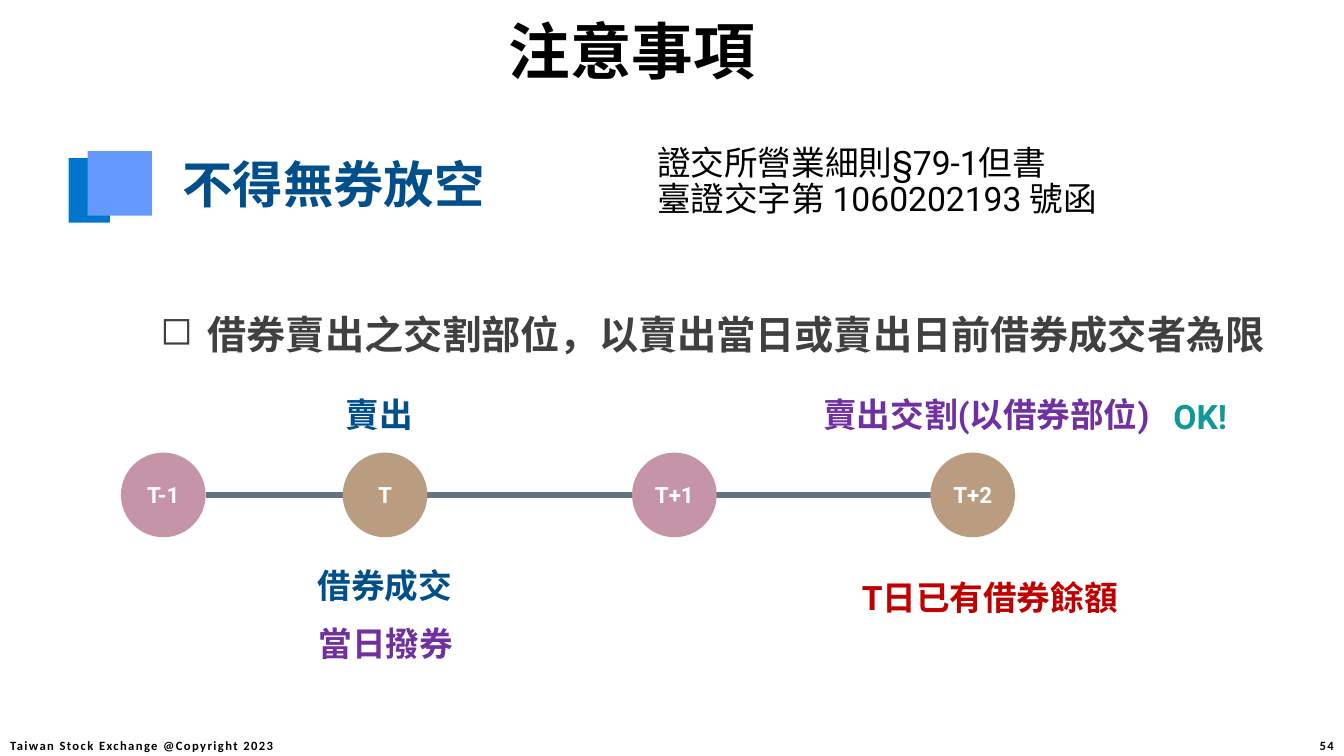
from dataclasses import dataclass
from typing import Optional

from lxml import etree
from pptx import Presentation
from pptx.dml.color import RGBColor
from pptx.enum.shapes import MSO_CONNECTOR, MSO_SHAPE
from pptx.enum.text import MSO_ANCHOR, MSO_AUTO_SIZE, PP_ALIGN
from pptx.oxml.ns import qn
from pptx.util import Pt

BLACK = RGBColor(0x00, 0x00, 0x00)
WHITE = RGBColor(0xFF, 0xFF, 0xFF)
GREY = RGBColor(0x40, 0x40, 0x40)
SLATE = RGBColor(0x65, 0x73, 0x80)
NAVY = RGBColor(0x00, 0x4F, 0x8A)
BLUE = RGBColor(0x00, 0x75, 0xCC)
LIGHT_BLUE = RGBColor(0x66, 0x99, 0xFF)
PURPLE = RGBColor(0x70, 0x30, 0xA0)
TEAL = RGBColor(0x10, 0x98, 0x98)
RED = RGBColor(0xC0, 0x00, 0x00)
PINK = RGBColor(0xC5, 0x94, 0xA6)
TAN = RGBColor(0xBA, 0x9C, 0x80)

DAY_SIZE = 60.5
DAY_TOP = 323.3


@dataclass
class Label:
    text: str
    left: float
    top: float
    width: float
    height: float
    color: RGBColor
    size: float = 24
    font: str = "Roboto"
    bold: bool = True
    spacing: float = 1.25
    after: float = 12
    bullet: Optional[str] = None
    indent: float = 0


@dataclass
class Footer:
    text: str
    left: float
    width: float
    align: PP_ALIGN


@dataclass
class Day:
    name: str
    left: float
    color: RGBColor


@dataclass
class Block:
    left: float
    top: float
    width: float
    height: float
    color: RGBColor


BLOCKS = [
    Block(49, 113, 29.5, 46, BLUE),
    Block(62.6, 108, 46, 46, LIGHT_BLUE),
]
LABELS = [
    Label("不得無券放空", 130.3, 114.5, 264.2, 39.6, NAVY, size=36,
          font="Calibri", spacing=0.9, after=0),
    Label("證交所營業細則§79-1但書\n臺證交字第 1060202193 號函", 469.4, 104.4, 321.8, 52.6,
          BLACK, bold=False, spacing=0.9, after=0),
    Label("借券賣出之交割部位，以賣出當日或賣出日前借券成交者為限", 114.5, 213.1, 815, 42.5,
          GREY, size=28, bullet="◻", indent=33.8),
    Label("賣出", 247, 274.3, 65.5, 36, NAVY),
    Label("賣出交割(以借券部位)", 588.2, 274.3, 256.3, 33.8, PURPLE),
    Label("OK!", 838.1, 275.8, 65.5, 33.8, TEAL),
    Label("借券成交", 226.8, 396, 105.8, 36, NAVY),
    Label("當日撥券", 227.5, 437.8, 105.8, 36, PURPLE),
    Label("T日已有借券餘額", 615.6, 404.6, 240.5, 33.8, RED),
]
DAYS = [
    Day("T-1", 86.4, PINK),
    Day("T", 244.8, TAN),
    Day("T+1", 451.5, PINK),
    Day("T+2", 664.6, TAN),
]
FOOTERS = [
    Footer("Taiwan Stock Exchange @Copyright 2023", -10.1, 222.5, PP_ALIGN.CENTER),
    Footer("54", 917.3, 42.5, PP_ALIGN.RIGHT),
]


def style_runs(p, font: str, size: float, color: RGBColor, bold: bool = True) -> None:
    for r in p.runs:
        r.font.name = font
        r.font.size = Pt(size)
        r.font.bold = bold
        r.font.color.rgb = color


def add_title(s, text: str) -> None:
    sp = s.shapes.title
    sp.left, sp.top, sp.width, sp.height = Pt(119.5), Pt(0), Pt(804.2), Pt(66.2)
    tf = sp.text_frame
    tf.text = text
    tf.auto_size = MSO_AUTO_SIZE.NONE
    tf.vertical_anchor = MSO_ANCHOR.MIDDLE
    tf.margin_right = Pt(147.6)
    p = tf.paragraphs[0]
    p.alignment = PP_ALIGN.CENTER
    p.line_spacing = 1.1
    style_runs(p, "Calibri", 44, BLACK)


def add_solid(s, kind: MSO_SHAPE, left: float, top: float, width: float,
              height: float, color: RGBColor):
    sp = s.shapes.add_shape(kind, Pt(left), Pt(top), Pt(width), Pt(height))
    sp.shadow.inherit = False
    sp.fill.solid()
    sp.fill.fore_color.rgb = color
    sp.line.fill.background()
    return sp


def add_bullet(p, char: str, indent: float) -> None:
    pPr = p._p.get_or_add_pPr()
    pPr.set("marL", str(Pt(indent)))
    pPr.set("indent", str(-Pt(indent)))
    etree.SubElement(pPr, qn("a:buChar")).set("char", char)


def add_label(s, label: Label) -> None:
    sp = s.shapes.add_textbox(Pt(label.left), Pt(label.top), Pt(label.width), Pt(label.height))
    tf = sp.text_frame
    tf.text = label.text
    tf.word_wrap = True
    tf.auto_size = MSO_AUTO_SIZE.SHAPE_TO_FIT_TEXT
    tf.margin_left = tf.margin_right = tf.margin_top = tf.margin_bottom = 0
    for p in tf.paragraphs:
        if label.bullet:
            add_bullet(p, label.bullet, label.indent)
        p.line_spacing = label.spacing
        p.space_after = Pt(label.after)
        style_runs(p, label.font, label.size, label.color, label.bold)


def add_timeline(s, days: list[Day]) -> None:
    """Draw the line from the first day to the last, then the days on it."""
    middle = Pt(DAY_TOP + DAY_SIZE / 2)
    line = s.shapes.add_connector(
        MSO_CONNECTOR.STRAIGHT, Pt(days[0].left + DAY_SIZE), middle,
        Pt(days[-1].left + DAY_SIZE), middle)
    line.line.color.rgb = SLATE
    line.line.width = Pt(4.5)
    etree.SubElement(line._element.spPr, qn("a:effectLst"))
    for day in days:
        sp = add_solid(s, MSO_SHAPE.OVAL, day.left, DAY_TOP, DAY_SIZE, DAY_SIZE, day.color)
        tf = sp.text_frame
        tf.text = day.name
        tf.vertical_anchor = MSO_ANCHOR.MIDDLE
        p = tf.paragraphs[0]
        p.alignment = PP_ALIGN.CENTER
        style_runs(p, "Roboto", 16, WHITE)


def add_footer(s, footer: Footer) -> None:
    sp = s.shapes.add_textbox(Pt(footer.left), Pt(518.4), Pt(footer.width), Pt(28.8))
    tf = sp.text_frame
    tf.text = footer.text
    tf.word_wrap = True
    tf.vertical_anchor = MSO_ANCHOR.MIDDLE
    p = tf.paragraphs[0]
    p.alignment = footer.align
    style_runs(p, "Calibri", 9, BLACK)
    p.runs[0]._r.get_or_add_rPr().set("spc", "100")


def main() -> None:
    prs = Presentation()
    prs.slide_width, prs.slide_height = Pt(960), Pt(540)
    s = prs.slides.add_slide(prs.slide_layouts[5])
    add_title(s, "注意事項")
    for block in BLOCKS:
        add_solid(s, MSO_SHAPE.RECTANGLE, block.left, block.top,
                  block.width, block.height, block.color)
    add_timeline(s, DAYS)
    for label in LABELS:
        add_label(s, label)
    for footer in FOOTERS:
        add_footer(s, footer)
    prs.save("out.pptx")


if __name__ == "__main__":
    main()
